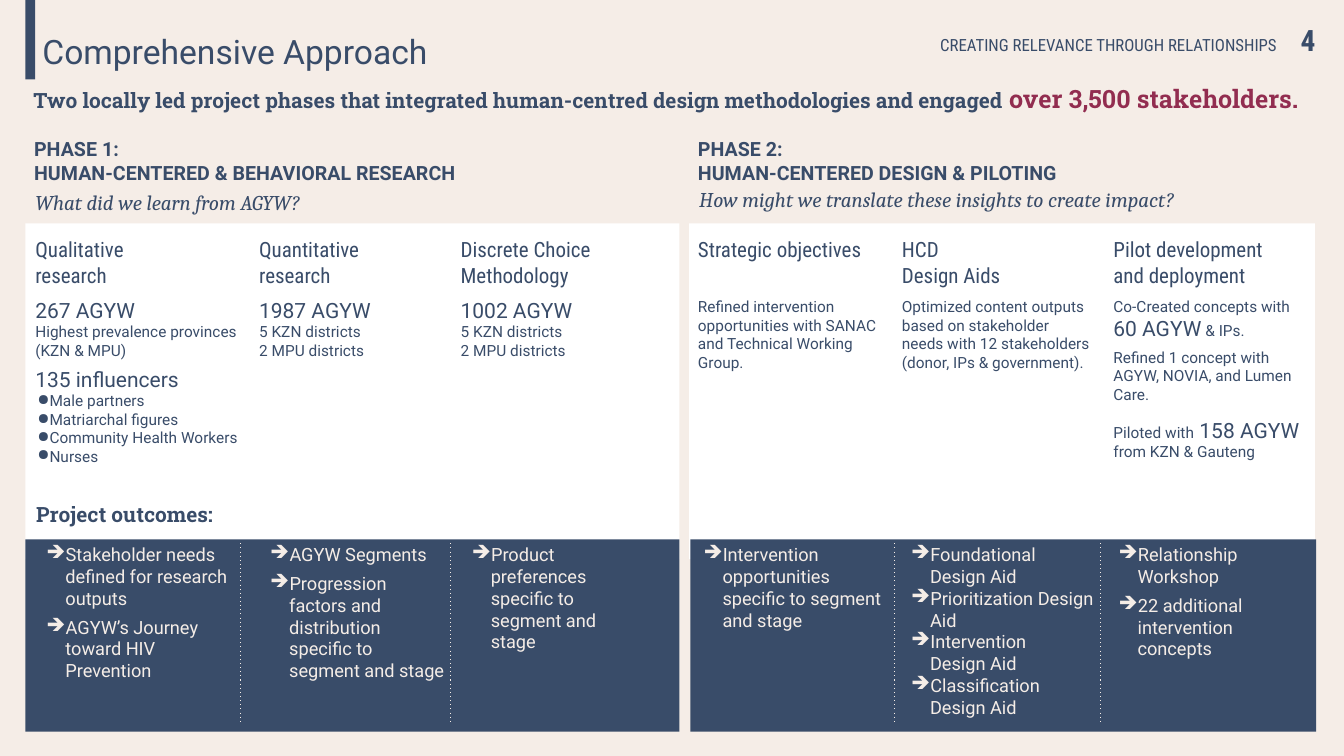
from dataclasses import dataclass, field

from lxml.etree import SubElement
from pptx import Presentation
from pptx.dml.color import RGBColor as RGB
from pptx.enum.shapes import MSO_CONNECTOR as CONN, MSO_SHAPE as SHAPE
from pptx.enum.text import MSO_ANCHOR as ANCHOR, MSO_AUTO_SIZE as AUTO
from pptx.oxml.ns import qn
from pptx.util import Cm, Pt


def style(size, name, color, bold=False, italic=False):
    return dict(size=Pt(size), name=name, color=color, bold=bold, italic=italic)


class Theme:
    navy, cream, white, wine = "394C69", "F5EDE7", "FFFFFF", "922D50"
    title = style(24, "Roboto", navy)
    running = style(12, "Roboto Condensed", navy)
    number = style(21, "Roboto Condensed", navy, bold=True)
    lead = style(15, "Roboto Slab", navy, bold=True)
    accent = style(18, "Roboto Slab", wine, bold=True)
    phase = style(14, "Roboto", navy, bold=True)
    question = style(15, "Cambria", navy, italic=True)
    heading = style(15, "Roboto Condensed", navy)
    figure = style(15, "Roboto", navy)
    detail = style(11, "Roboto", navy)
    outcome = style(13, "Roboto", cream)
    inset = 0.25


@dataclass
class Para:
    runs: list
    before: float = 0
    after: float = 0
    bullet: str = ""
    margin: float = 0
    hang: float = 0
    tabs: tuple = ()


@dataclass
class Column:
    x: float
    width: float
    heading: list
    facts_height: float
    facts: list
    outcome_x: float
    outcome_width: float
    outcome_height: float
    outcomes: list
    gap: float = 5


@dataclass
class Phase:
    name: str
    subject: str
    question: str
    columns: list
    dividers: tuple
    arrow_margin: float
    question_top: float
    band_x: float = 0
    note: list = field(default_factory=list)


def plain(text, fmt, **options):
    return Para([(text, fmt)], **options)


def big(text, **options):
    return plain(text, Theme.figure, **options)


def small(text, **options):
    return plain(text, Theme.detail, **options)


def set_font(font, fmt):
    for key, value in fmt.items():
        if key == "color":
            font.color.rgb = RGB.from_string(value)
        else:
            setattr(font, key, value)


def add_marks(p, para):
    pPr = p._p.get_or_add_pPr()
    if para.bullet:
        pPr.set("marL", str(Cm(para.margin)))
        pPr.set("indent", str(Cm(para.hang)))
        color = SubElement(pPr, qn("a:buClr"))
        SubElement(color, qn("a:srgbClr"), val=para.runs[0][1]["color"])
        SubElement(pPr, qn("a:buChar"), char=para.bullet)
    if para.tabs:
        stops = SubElement(pPr, qn("a:tabLst"))
        for stop in para.tabs:
            SubElement(stops, qn("a:tab"), pos=str(Cm(stop)), algn="r")


def add_text(s, box, paras, insets=(Theme.inset,) * 4, grow=True, anchor=ANCHOR.TOP):
    tf = s.shapes.add_textbox(*map(Cm, box)).text_frame
    left, top, right, bottom = map(Cm, insets)
    frame = dict(word_wrap=True, vertical_anchor=anchor,
                 auto_size=AUTO.SHAPE_TO_FIT_TEXT if grow else AUTO.NONE,
                 margin_left=left, margin_top=top, margin_right=right, margin_bottom=bottom)
    for key, value in frame.items():
        setattr(tf, key, value)
    for i, para in enumerate(paras):
        p = tf.add_paragraph() if i else tf.paragraphs[0]
        add_marks(p, para)
        p.space_before, p.space_after = Pt(para.before), Pt(para.after)
        for text, fmt in para.runs:
            for j, line in enumerate(text.split("\v")):
                if j:
                    p.add_line_break()
                r = p.add_run()
                r.text = line
                set_font(r.font, fmt)


def add_rect(s, box, color):
    sp = s.shapes.add_shape(SHAPE.RECTANGLE, *map(Cm, box))
    sp.shadow.inherit = False
    sp.fill.solid()
    sp.fill.fore_color.rgb = RGB.from_string(color)
    sp.line.fill.background()


def add_divider(s, x, top, bottom):
    line = s.shapes.add_connector(CONN.STRAIGHT, *map(Cm, (x, top, x, bottom)))
    line.line.width = Pt(0.75)
    line.line.color.rgb = RGB.from_string(Theme.cream)
    spPr = line._element.spPr
    SubElement(spPr.find(qn("a:ln")), qn("a:prstDash"), val="dot")
    SubElement(spPr, qn("a:effectLst"))


def draw_header(s, box):
    x, y, w, h = box
    flush = (0,) * 4
    add_rect(s, (x, y, 0.25, 2), Theme.navy)
    add_text(s, (x + 0.43, y + 0.79, 16.08, 1.55),
             [plain("Comprehensive Approach", Theme.title)], flush, False)
    add_text(s, (x + w - 15.78, y + 0.46, 15.78, 1.09),
             [Para([("\tCREATING RELEVANCE THROUGH RELATIONSHIPS", Theme.running),
                    ("\t4", Theme.number)], tabs=(14.56, 15.52))],
             (0.25, 0.25, 0, 0.25), False, ANCHOR.MIDDLE)
    add_text(s, (x + 0.2, y + 2.11, w - 0.2, h - 2.11),
             [Para([("Two locally led project phases that integrated human-centred design "
                     "methodologies and engaged ", Theme.lead),
                    ("over 3,500 stakeholders.", Theme.accent)])], flush, False)


def draw_column(s, box, column, arrow_margin):
    x, y, w, h = box
    add_text(s, (x, y + 2.52, w, 1.14 + 0.66 * (len(column.heading) - 1)),
             [plain(line, Theme.heading) for line in column.heading])
    add_text(s, (x, y + 4.04, w, column.facts_height), column.facts)
    left = x - column.x + column.outcome_x
    add_text(s, (left, y + 10.24, column.outcome_width, column.outcome_height),
             [plain(text, Theme.outcome, bullet="➔", margin=arrow_margin, hang=-0.48,
                    before=column.gap if i else 0, after=column.gap if i else 0)
              for i, text in enumerate(column.outcomes)])


def draw_phase(s, box, phase):
    x, y, w, h = box
    add_rect(s, (x, y + 2.43, w, 8.46), Theme.white)
    add_rect(s, (x + phase.band_x, y + 10.39, w, h - 10.39), Theme.navy)
    add_text(s, (x - 0.03, y, w - 0.5, 2.26),
             [plain(text, Theme.phase) for text in (phase.name, phase.subject)])
    add_text(s, (x, y + phase.question_top, w - 0.8, 1.2),
             [plain(phase.question, Theme.question)], grow=False)
    for column in phase.columns:
        draw_column(s, (x + column.x, y, column.width, h), column, phase.arrow_margin)
    for offset in phase.dividers:
        add_divider(s, x + offset, y + 10.49, y + 15.04)
    if phase.note:
        add_text(s, (x + 0.02, y + 9.2, w - 0.63, 1.14), phase.note)


DISTRICTS = [small("5 KZN districts"), small("2 MPU districts")]
INFLUENCERS = ["Male partners", "Matriarchal figures", "Community Health Workers", "Nurses"]

RESEARCH = Phase(
    "PHASE 1:", "HUMAN-CENTERED & BEHAVIORAL RESEARCH", "What did we learn from AGYW?",
    [Column(0, 5.87, ["Qualitative", "research"], 4.8,
            [big("267 AGYW"), small("Highest prevalence provinces (KZN & MPU)"),
             big("135 influencers", before=5)]
            + [small(who, bullet="●", margin=0.3, hang=-0.25) for who in INFLUENCERS],
            0, 5.33, 4.01, ["Stakeholder needs defined for research outputs",
                            "AGYW’s Journey toward HIV Prevention"]),
     Column(5.64, 5.26, ["Quantitative", "research"], 2.57, [big("1987 AGYW")] + DISTRICTS,
            5.64, 5.16, 4.57, ["AGYW Segments", "Progression factors and distribution "
                               "specific to segment and stage"]),
     Column(10.72, 5.16, ["Discrete Choice", "Methodology"], 2.08,
            [big("1002 AGYW")] + DISTRICTS,
            10.72, 4.34, 3.3, ["Product preferences specific to segment and stage"])],
    (5.41, 10.72), 0.76, 1.32, note=[plain("Project outcomes:", Theme.lead)])

PILOTING = Phase(
    "PHASE 2:", "HUMAN-CENTERED DESIGN & PILOTING",
    "How might we translate these insights to create impact?",
    [Column(-0.03, 5.33, ["Strategic objectives"], 2.39,
            [small("Refined intervention opportunities with SANAC and Technical Working Group.")],
            0.08, 5.23, 2.74, ["Intervention opportunities specific to segment and stage"]),
     Column(5.11, 5.33, ["HCD", "Design Aids"], 2.39,
            [small("Optimized content outputs based on stakeholder needs with 12 stakeholders"),
             small("(donor, IPs & government).")],
            5.31, 5.18, 4.95, ["Foundational Design Aid", "Prioritization Design Aid",
                               "Intervention\vDesign Aid", "Classification Design Aid"], 0),
     Column(10.44, 5.26, ["Pilot development", "and deployment"], 4.67,
            [Para([("Co-Created concepts with ", Theme.detail), ("60 AGYW", Theme.figure),
                   (" & IPs.", Theme.detail)]),
             small("Refined 1 concept with AGYW, NOVIA, and Lumen Care.", before=5),
             Para([("Piloted with", Theme.detail), (" 158 AGYW", Theme.figure),
                   (" from KZN & Gauteng", Theme.detail)], before=10)],
            10.54, 5.23, 3.48, ["Relationship Workshop", "22 additional intervention concepts"])],
    (5.18, 10.36), 0.51, 1.24, band_x=0.03)


def main():
    prs = Presentation()
    prs.slide_width, prs.slide_height = Cm(33.87), Cm(19.05)
    s = prs.slides.add_slide(prs.slide_layouts[6])
    s.background.fill.solid()
    s.background.fill.fore_color.rgb = RGB.from_string(Theme.cream)
    draw_header(s, (0.64, 0, 32.52, 3.48))
    draw_phase(s, (0.64, 3.2, 16.48, 15.24), RESEARCH)
    draw_phase(s, (17.37, 3.2, 15.77, 15.24), PILOTING)
    prs.save("out.pptx")


if __name__ == "__main__":
    main()
